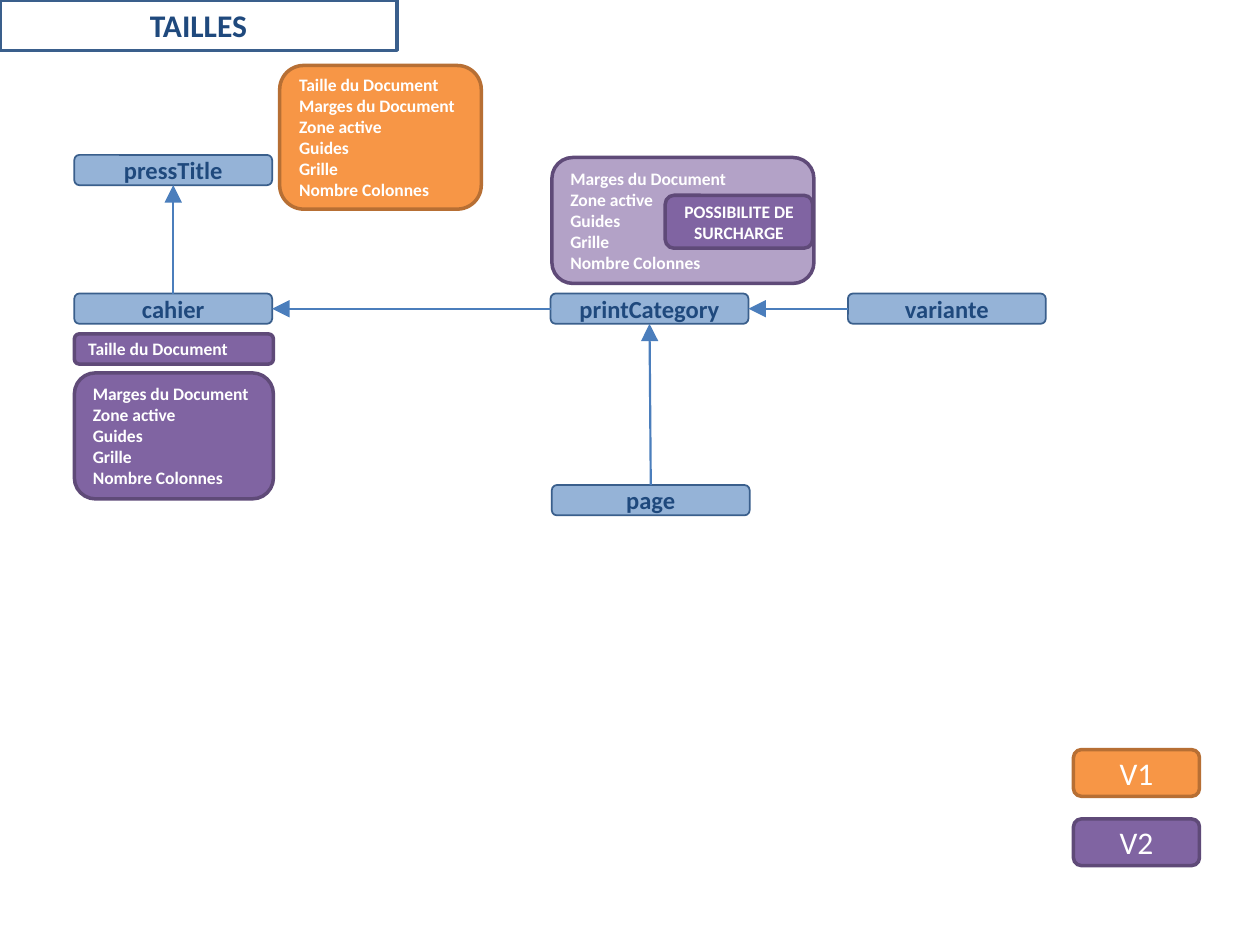
from dataclasses import dataclass

from lxml import etree
from pptx import Presentation
from pptx.dml.color import RGBColor
from pptx.enum.shapes import MSO_CONNECTOR, MSO_SHAPE
from pptx.enum.text import MSO_ANCHOR, PP_ALIGN
from pptx.oxml.ns import qn
from pptx.shapes.autoshape import Shape
from pptx.slide import Slide
from pptx.util import Inches, Pt

RECTANGLE, ROUNDED = MSO_SHAPE.RECTANGLE, MSO_SHAPE.ROUNDED_RECTANGLE
STRAIGHT = MSO_CONNECTOR.STRAIGHT
CENTER, LEFT = PP_ALIGN.CENTER, PP_ALIGN.LEFT
MIDDLE = MSO_ANCHOR.MIDDLE
TOP_SITE, LEFT_SITE, BOTTOM_SITE, RIGHT_SITE = range(4)

SLIDE_WIDTH, SLIDE_HEIGHT = Inches(10), Inches(7.5)
COLUMN, ROW = SLIDE_WIDTH / 100, SLIDE_HEIGHT / 75


@dataclass(frozen=True)
class Theme:
    font: str = "Calibri"
    navy: str = "1F497D"
    white: str = "FFFFFF"
    blue: str = "95B3D7"
    blue_edge: str = "3A5F8C"
    arrow: str = "4B7EBC"
    orange: str = "F79646"
    orange_edge: str = "B76F34"
    purple: str = "8064A2"
    purple_edge: str = "5F4A78"
    lilac: str = "B3A2C7"
    heading_size: float = 18
    entity_size: float = 14
    detail_size: float = 10
    thin: float = 1
    medium: float = 1.25
    thick: float = 2


THEME = Theme()


@dataclass(frozen=True)
class Style:
    fill: str | None
    edge: str
    edge_width: float
    ink: str
    size: float
    bold: bool = True
    align: PP_ALIGN = CENTER
    outline: MSO_SHAPE = ROUNDED


@dataclass(frozen=True)
class Box:
    column: float
    row: float
    columns: float
    rows: float
    lines: tuple[str, ...]
    style: Style


@dataclass(frozen=True)
class Arrow:
    source: str
    source_site: int
    target: str
    target_site: int


def detail_style(fill: str, edge: str, align: PP_ALIGN = LEFT) -> Style:
    return Style(fill, edge, THEME.thick, THEME.white, THEME.detail_size, align=align)


def version_style(fill: str, edge: str) -> Style:
    return Style(fill, edge, THEME.thick, THEME.white, THEME.heading_size, bold=False)


TITLE = Style(None, THEME.blue_edge, THEME.thick, THEME.navy, THEME.heading_size, outline=RECTANGLE)
ENTITY = Style(THEME.blue, THEME.blue_edge, THEME.thin, THEME.navy, THEME.entity_size)
ORANGE = (THEME.orange, THEME.orange_edge)
PURPLE = (THEME.purple, THEME.purple_edge)
LILAC = (THEME.lilac, THEME.purple_edge)

DOCUMENT_SIZE = ("Taille du Document",)
LAYOUT_SETTINGS = ("Marges du Document", "Zone active", "Guides", "Grille", "Nombre Colonnes")

ENTITY_COLUMNS, ENTITY_ROWS = 15.7, 2.4
ENTITY_POSITIONS = {
    "pressTitle": (5.9, 12.3),
    "cahier": (5.9, 23.3),
    "page": (43.8, 38.5),
    "printCategory": (43.7, 23.3),
    "variante": (67.3, 23.3),
}
ARROWS = (
    Arrow("cahier", TOP_SITE, "pressTitle", BOTTOM_SITE),
    Arrow("printCategory", LEFT_SITE, "cahier", RIGHT_SITE),
    Arrow("variante", LEFT_SITE, "printCategory", RIGHT_SITE),
    Arrow("page", TOP_SITE, "printCategory", BOTTOM_SITE),
)
BOXES = (
    Box(0, 0, 31.5, 4, ("TAILLES",), TITLE),
    Box(85.2, 59.5, 10, 3.7, ("V1",), version_style(*ORANGE)),
    Box(85.2, 65, 10, 3.7, ("V2",), version_style(*PURPLE)),
    Box(22.2, 5.2, 16, 11.4, DOCUMENT_SIZE + LAYOUT_SETTINGS, detail_style(*ORANGE)),
    Box(5.9, 26.5, 15.8, 2.4, DOCUMENT_SIZE, detail_style(*PURPLE)),
    Box(5.9, 29.6, 15.8, 10, LAYOUT_SETTINGS, detail_style(*PURPLE)),
    Box(43.8, 12.5, 20.8, 10, LAYOUT_SETTINGS, detail_style(*LILAC)),
    Box(52.8, 15.5, 11.7, 4.2, ("POSSIBILITE DE SURCHARGE",), detail_style(*PURPLE, CENTER)),
)


def draw_box(slide: Slide, box: Box) -> Shape:
    style = box.style
    shape = slide.shapes.add_shape(
        style.outline,
        round(box.column * COLUMN),
        round(box.row * ROW),
        round(box.columns * COLUMN),
        round(box.rows * ROW),
    )
    shape.shadow.inherit = False
    if style.fill is None:
        shape.fill.background()
    else:
        shape.fill.solid()
        shape.fill.fore_color.rgb = RGBColor.from_string(style.fill)
    shape.line.color.rgb = RGBColor.from_string(style.edge)
    shape.line.width = Pt(style.edge_width)
    write_lines(shape, box.lines, style)
    return shape


def write_lines(shape: Shape, lines: tuple[str, ...], style: Style) -> None:
    text_frame = shape.text_frame
    text_frame.word_wrap = True
    text_frame.vertical_anchor = MIDDLE
    text_frame.text = "\n".join(lines)
    for paragraph in text_frame.paragraphs:
        paragraph.alignment = style.align
        for run in paragraph.runs:
            run.font.name = THEME.font
            run.font.size = Pt(style.size)
            run.font.bold = style.bold
            run.font.color.rgb = RGBColor.from_string(style.ink)


def draw_arrow(slide: Slide, arrow: Arrow, entities: dict[str, Shape]) -> None:
    connector = slide.shapes.add_connector(STRAIGHT, 0, 0, 0, 0)
    connector.begin_connect(entities[arrow.source], arrow.source_site)
    connector.end_connect(entities[arrow.target], arrow.target_site)
    connector.line.color.rgb = RGBColor.from_string(THEME.arrow)
    connector.line.width = Pt(THEME.medium)
    line = connector.line._get_or_add_ln()
    etree.SubElement(line, qn("a:tailEnd"), type="triangle", w="lg", len="lg")
    etree.SubElement(connector._element.spPr, qn("a:effectLst"))


def main() -> None:
    presentation = Presentation()
    presentation.slide_width, presentation.slide_height = SLIDE_WIDTH, SLIDE_HEIGHT
    slide = presentation.slides.add_slide(presentation.slide_layouts[6])
    entities = {
        name: draw_box(slide, Box(column, row, ENTITY_COLUMNS, ENTITY_ROWS, (name,), ENTITY))
        for name, (column, row) in ENTITY_POSITIONS.items()
    }
    for arrow in ARROWS:
        draw_arrow(slide, arrow, entities)
    for box in BOXES:
        draw_box(slide, box)
    presentation.save("out.pptx")


if __name__ == "__main__":
    main()
